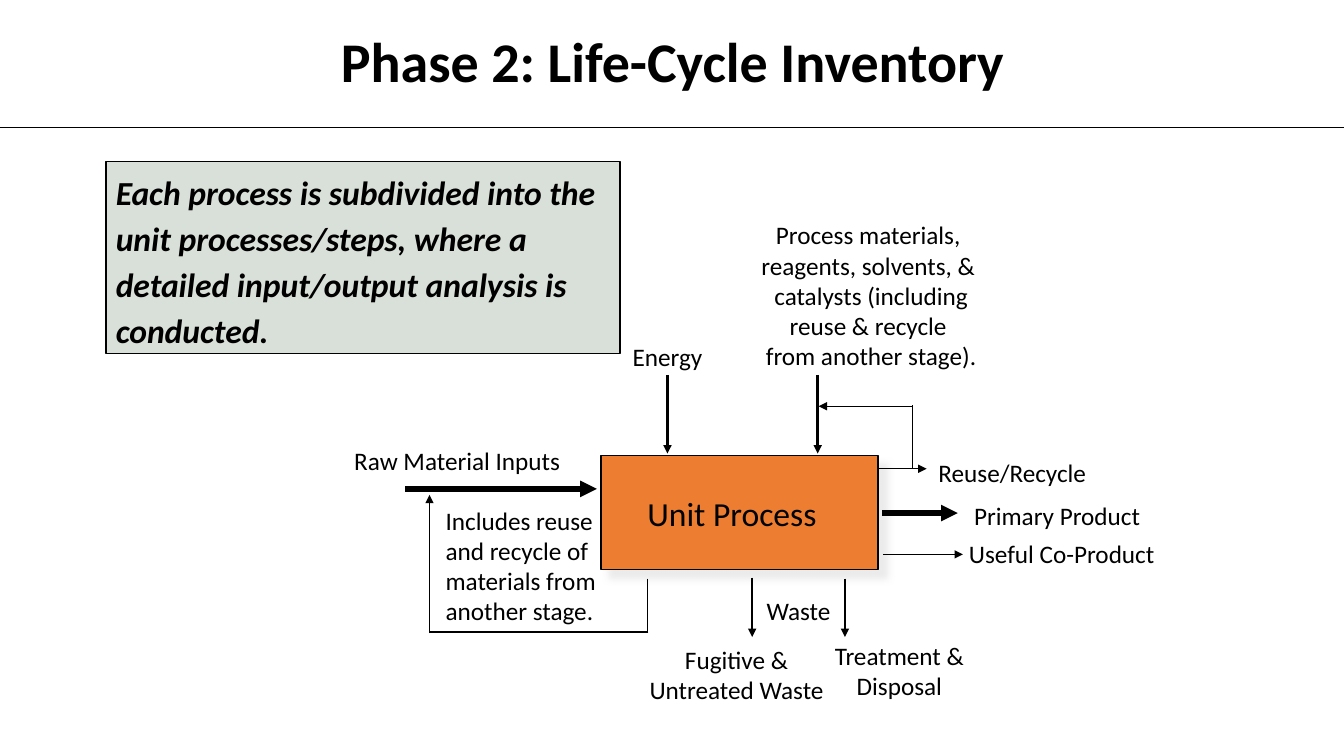
"""Build the life-cycle inventory slide with its unit process diagram."""
from dataclasses import dataclass

from lxml.etree import SubElement
from pptx import Presentation
from pptx.dml.color import RGBColor
from pptx.enum.shapes import MSO_CONNECTOR, MSO_SHAPE
from pptx.enum.text import MSO_ANCHOR, MSO_AUTO_SIZE, PP_ALIGN
from pptx.oxml.ns import qn
from pptx.shapes.autoshape import Shape
from pptx.slide import Slide
from pptx.util import Inches, Pt


@dataclass(frozen=True)
class Theme:
    """Colours, font and type sizes of the slide."""
    ink: str = "000000"
    process: str = "ED7D31"
    note: str = "003300"
    shadow: str = "E7E6E6"
    font: str = "Calibri"
    title: float = 40
    large: float = 24
    label: float = 18


@dataclass(frozen=True)
class Area:
    """Position and size in inches."""
    left: float
    top: float
    width: float
    height: float


@dataclass(frozen=True)
class Label:
    """Unwrapped diagram text, one paragraph per line."""
    area: Area
    text: str
    size: float = Theme.label
    align: PP_ALIGN = PP_ALIGN.CENTER


@dataclass(frozen=True)
class Flow:
    """Straight line between two points, with an optional arrowhead at its end."""
    start: tuple[float, float]
    end: tuple[float, float]
    weight: float = 1
    arrow: bool = True


THEME = Theme()
LABELS = [
    Label(Area(6.33, 4.85, 1.86, 0.48), "Unit Process", THEME.large),
    Label(Area(6.19, 3.35, 0.86, 0.38), "Energy"),
    Label(Area(3.42, 4.38, 2.23, 0.38), "Raw Material Inputs"),
    Label(Area(4.34, 4.97, 1.67, 1.29),
          "Includes reuse\nand recycle of\nmaterials from\nanother stage.", align=PP_ALIGN.LEFT),
    Label(Area(6.35, 6.35, 1.91, 0.69), "Fugitive &\nUntreated Waste"),
    Label(Area(8.19, 6.31, 1.46, 0.69), "Treatment &\nDisposal"),
    Label(Area(7.5, 5.87, 0.84, 0.38), "Waste"),
    Label(Area(9.57, 4.92, 1.83, 0.38), "Primary Product"),
    Label(Area(9.52, 5.3, 2.02, 0.38), "Useful Co-Product"),
    Label(Area(9.19, 4.5, 1.7, 0.38), "Reuse/Recycle"),
    Label(Area(7.46, 2.14, 2.36, 1.6),
          "Process materials, \nreagents, solvents, & \ncatalysts (including\n"
          "reuse & recycle \nfrom another stage)."),
]
FLOWS = [
    Flow((8.11, 3.72), (8.11, 4.5), 2),
    Flow((8.75, 5.09), (9.5, 5.09), 4),
    Flow((8.76, 5.5), (9.55, 5.5)),
    Flow((8.79, 4.65), (9.05, 4.65), arrow=False),
    Flow((9.05, 4.64), (9.05, 4.02), arrow=False),
    Flow((9.05, 4.03), (8.12, 4.03)),
    Flow((6.62, 3.72), (6.62, 4.5), 2),
    Flow((4.02, 4.85), (5.92, 4.85), 4),
    Flow((6.42, 5.74), (6.42, 6.26), arrow=False),
    Flow((6.43, 6.27), (4.26, 6.27), arrow=False),
    Flow((4.26, 6.28), (4.26, 4.91)),
    Flow((7.46, 5.73), (7.46, 6.32)),
    Flow((8.38, 5.74), (8.38, 6.32), 2),
    Flow((8.71, 4.65), (9.19, 4.65)),
]


def lengths(area: Area) -> tuple[Inches, ...]:
    """Return the area as slide lengths."""
    return tuple(Inches(value) for value in (area.left, area.top, area.width, area.height))


def write(box: Shape, text: str, *, size: float, align: PP_ALIGN = PP_ALIGN.LEFT,
          bold: bool = False, italic: bool = False, spacing: float = 1.0,
          wrap: bool = True, inset: tuple[float, float] = (0.1, 0.05)) -> None:
    """Fill a box with text, one paragraph per line."""
    frame = box.text_frame
    frame.word_wrap = wrap
    frame.auto_size = MSO_AUTO_SIZE.SHAPE_TO_FIT_TEXT
    frame.vertical_anchor = MSO_ANCHOR.TOP
    frame.margin_left = frame.margin_right = Inches(inset[0])
    frame.margin_top = frame.margin_bottom = Inches(inset[1])
    for index, line in enumerate(text.split("\n")):
        para = frame.add_paragraph() if index else frame.paragraphs[0]
        para.alignment = align
        para.line_spacing = spacing
        span = para.add_run()
        span.text = line
        span.font.name = THEME.font
        span.font.size = Pt(size)
        span.font.bold = bold
        span.font.italic = italic
        span.font.color.rgb = RGBColor.from_string(THEME.ink)


def add_panel(page: Slide, area: Area, fill: str) -> Shape:
    """Add a filled rectangle with a thin outline."""
    panel = page.shapes.add_shape(MSO_SHAPE.RECTANGLE, *lengths(area))
    panel.shadow.inherit = False
    panel.fill.solid()
    panel.fill.fore_color.rgb = RGBColor.from_string(fill)
    panel.line.color.rgb = RGBColor.from_string(THEME.ink)
    panel.line.width = Pt(1)
    return panel


def add_process(page: Slide) -> None:
    """Add the unit process block with its soft shadow."""
    block = add_panel(page, Area(5.96, 4.52, 2.75, 1.13), THEME.process)
    effects = block.element.spPr.find(qn("a:effectLst"))
    shadow = SubElement(effects, qn("a:outerShdw"), blurRad=str(Pt(5)),
                        dist=str(Pt(8.5)), dir="2700000", algn="tl", rotWithShape="0")
    colour = SubElement(shadow, qn("a:srgbClr"), val=THEME.shadow)
    SubElement(colour, qn("a:alpha"), val="75000")


def add_note(page: Slide) -> None:
    """Add the tinted explanatory note."""
    note = add_panel(page, Area(1.05, 1.6, 5.1, 1.91), THEME.note)
    colour = note.element.spPr.find(qn("a:solidFill")).find(qn("a:srgbClr"))
    SubElement(colour, qn("a:alpha"), val="15000")
    write(note, "Each process is subdivided into the unit processes/steps, where a "
          "detailed input/output analysis is conducted.",
          size=THEME.large, bold=True, italic=True, spacing=1.14)


def add_flow(page: Slide, flow: Flow) -> None:
    """Draw one line of the diagram."""
    points = [Inches(value) for value in (*flow.start, *flow.end)]
    connector = page.shapes.add_connector(MSO_CONNECTOR.STRAIGHT, *points)
    connector.line.color.rgb = RGBColor.from_string(THEME.ink)
    connector.line.width = Pt(flow.weight)
    properties = connector.element.spPr
    if flow.arrow:
        SubElement(properties.find(qn("a:ln")), qn("a:tailEnd"), type="triangle")
    SubElement(properties, qn("a:effectLst"))


def main() -> None:
    """Build and save the deck."""
    deck = Presentation()
    deck.slide_width, deck.slide_height = Inches(13.33), Inches(7.5)
    page = deck.slides.add_slide(deck.slide_layouts[6])
    add_process(page)
    for flow in FLOWS:
        add_flow(page, flow)
    for label in LABELS:
        box = page.shapes.add_textbox(*lengths(label.area))
        write(box, label.text, size=label.size, align=label.align, wrap=False,
              inset=(0.08, 0.04))
    add_note(page)
    title = page.shapes.add_textbox(*lengths(Area(2.83, 0.29, 7.68, 0.71)))
    write(title, "Phase 2: Life-Cycle Inventory", size=THEME.title,
          align=PP_ALIGN.CENTER, bold=True, spacing=0.9)
    add_flow(page, Flow((0, 1.26), (13.33, 1.26), 0.5, arrow=False))
    deck.save("out.pptx")


if __name__ == "__main__":
    main()
